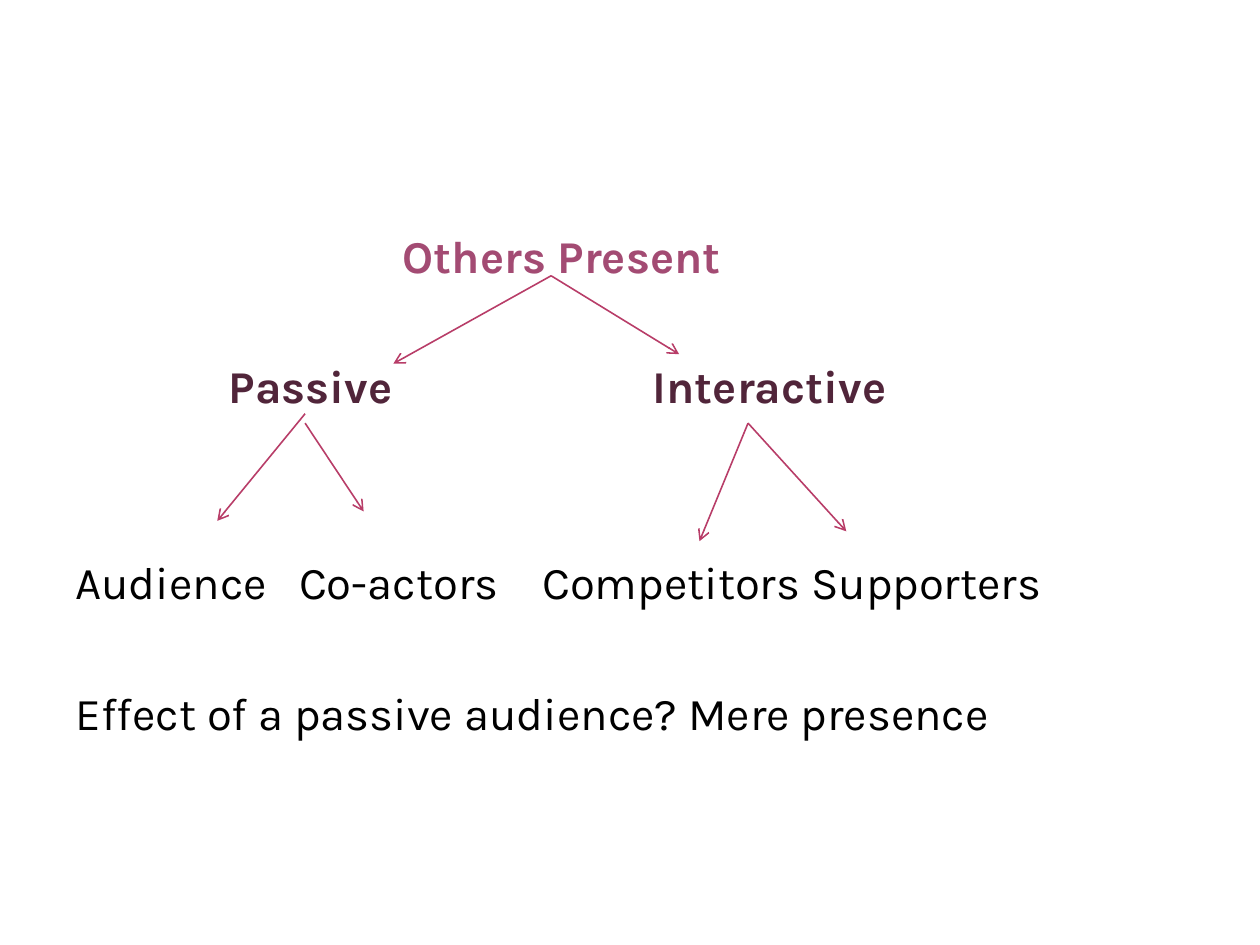
from lxml import etree
from pptx import Presentation
from pptx import util as u
from pptx.dml.color import RGBColor
from pptx.enum import shapes, text
from pptx.oxml import ns

COLORS = {"heading": "A34B73", "branch": "51253A", "body": "000000", "arrow": "B83D68"}
LEFT, CENTER = text.PP_ALIGN.LEFT, text.PP_ALIGN.CENTER

# Wording, colour, bold, alignment, space before (pt)
BODY_LINES = [
    ("Others Present", "heading", True, CENTER, 0),
    ("Effect of a passive audience? Mere presence", "body", False, LEFT, 229.7),
]

# Top (cm), colour, bold, and for each label: wording, left and width (cm)
LABEL_ROWS = [
    (7.22, "branch", True, [("Passive", 4.61, 3.5), ("Interactive", 13.16, 5)]),
    (11.17, "body", False, [("Audience", 1.52, 4.1), ("Co-actors", 6.03, 4.3),
                            ("Competitors", 10.93, 5.4), ("Supporters", 16.35, 5)]),
]

# Start and end points (cm)
ARROWS = [
    ((11.11, 5.56), (7.93, 7.33)),
    ((11.11, 5.56), (13.69, 7.14)),
    ((6.15, 8.34), (4.38, 10.5)),
    ((6.15, 8.53), (7.33, 10.31)),
    ((15.08, 8.53), (14.1, 10.91)),
    ((15.08, 8.53), (17.06, 10.71)),
]


def set_values(target, values):
    for name, value in values.items():
        setattr(target, name, value)


def remove_bullet(para):
    props = para._p.get_or_add_pPr()
    props.set("marL", "0")
    props.set("indent", "0")
    etree.SubElement(props, ns.qn("a:buNone"))


def write_line(para, wording, color, bold, align=LEFT, before=0):
    set_values(para, {"alignment": align, "space_before": u.Pt(before)})
    span = para.add_run()
    span.text = wording
    set_values(span.font, {"name": "Karla", "size": u.Pt(26), "bold": bold})
    span.font.color.rgb = RGBColor.from_string(COLORS[color])


def fill_body(box):
    set_values(box, {"left": u.Cm(1.27), "top": u.Cm(4.47),
                     "width": u.Cm(20.12), "height": u.Cm(13.46)})
    frame = box.text_frame
    set_values(frame, {"word_wrap": True, "auto_size": text.MSO_AUTO_SIZE.NONE,
                       "vertical_anchor": text.MSO_ANCHOR.TOP})
    for index, line in enumerate(BODY_LINES):
        para = frame.add_paragraph() if index else frame.paragraphs[0]
        remove_bullet(para)
        write_line(para, *line)


def add_label(slide, wording, left, top, width, color, bold):
    box = slide.shapes.add_textbox(u.Cm(left), u.Cm(top), u.Cm(width), u.Cm(1.1))
    frame = box.text_frame
    set_values(frame, {"word_wrap": True, "margin_left": 0, "margin_right": 0,
                       "margin_top": 0, "margin_bottom": 0})
    write_line(frame.paragraphs[0], wording, color, bold)


def add_arrow(slide, start, end):
    points = [u.Cm(value) for value in (*start, *end)]
    arrow = slide.shapes.add_connector(shapes.MSO_CONNECTOR.STRAIGHT, *points)
    arrow.line.color.rgb = RGBColor.from_string(COLORS["arrow"])
    arrow.line.width = u.Pt(0.9)
    etree.SubElement(arrow.line._get_or_add_ln(), ns.qn("a:tailEnd"), type="arrow")
    etree.SubElement(arrow._element.spPr, ns.qn("a:effectLst"))


def main():
    deck = Presentation()
    set_values(deck, {"slide_width": u.Cm(25.4), "slide_height": u.Cm(19.05)})
    slide = deck.slides.add_slide(deck.slide_layouts[1])
    title = slide.shapes.title._element
    title.getparent().remove(title)
    fill_body(slide.placeholders[1])
    for top, color, bold, labels in LABEL_ROWS:
        for wording, left, width in labels:
            add_label(slide, wording, left, top, width, color, bold)
    for start, end in ARROWS:
        add_arrow(slide, start, end)
    deck.save("out.pptx")


if __name__ == "__main__":
    main()
